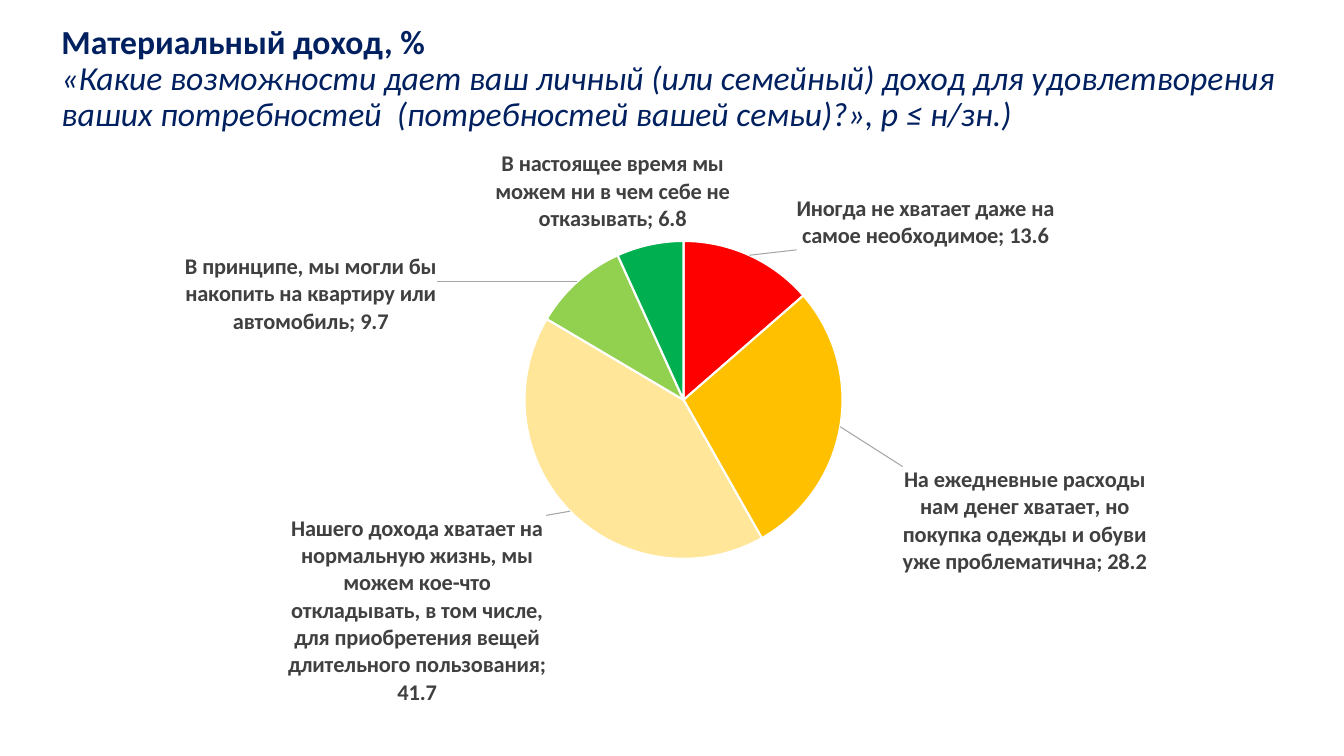
from copy import deepcopy

from lxml import etree
from pptx import Presentation
from pptx import util as u
from pptx.chart.data import CategoryChartData
from pptx.dml.color import RGBColor
from pptx.enum import chart as charts, text
from pptx.oxml import parse_xml
from pptx.oxml.ns import nsdecls, qn

HEADING = "Материальный доход, %"
QUESTION = (
    "«Какие возможности дает ваш личный (или семейный) доход для удовлетворения "
    "ваших потребностей  (потребностей вашей семьи)?», p ≤ н/зн.)"
)
# Answer, share, slice colour, label shift as a fraction of the chart
INCOME = [
    ("Иногда не хватает даже на самое необходимое", 13.6, "FF0000", (0.034, 0)),
    ("На ежедневные расходы нам денег хватает, но покупка одежды и обуви "
     "уже проблематична", 28.2, "FFC000", (0.043, 0.066)),
    ("Нашего дохода хватает на нормальную жизнь, мы можем кое-что откладывать, "
     "в том числе, для приобретения вещей длительного пользования",
     41.7, "FFE699", (-0.015, 0)),
    ("В принципе, мы могли бы накопить на квартиру или автомобиль",
     9.7, "92D050", (-0.104, 0.099)),
    ("В настоящее время мы можем ни в чем себе не отказывать",
     6.8, "00B050", (0.062, -0.01)),
]


def color(value):
    return RGBColor.from_string(value)


def manual_layout(**settings):
    """Return a c:layout element; settings follow schema order."""
    items = "".join(f'<c:{name} val="{value}"/>' for name, value in settings.items())
    return parse_xml(
        f'<c:layout {nsdecls("c")}><c:manualLayout>{items}</c:manualLayout></c:layout>'
    )


class SlideBuilder:
    font_name = "Calibri"
    title_color = "002060"
    label_color = "404040"

    def __init__(self, deck):
        self.page = deck.slides.add_slide(deck.slide_layouts[5])

    def style(self, font, size, hex_color, bold=False, italic=False):
        font.name, font.size = self.font_name, u.Pt(size)
        font.bold, font.italic = bold, italic
        font.color.rgb = color(hex_color)

    def title(self, heading, question, left, top, width, height):
        box = self.page.shapes.title
        box.left, box.top = u.Inches(left), u.Inches(top)
        box.width, box.height = u.Inches(width), u.Inches(height)
        frame = box.text_frame
        frame.auto_size = text.MSO_AUTO_SIZE.NONE
        frame.vertical_anchor = text.MSO_ANCHOR.MIDDLE
        para = frame.paragraphs[0]
        para.text = f"{heading}\v{question}"
        para.alignment = text.PP_ALIGN.LEFT
        para.line_spacing = 0.9
        first, second = para.runs
        self.style(first.font, 24, self.title_color, bold=True)
        self.style(second.font, 24, self.title_color, italic=True)

    def pie(self, rows, left, top, width, height):
        data = CategoryChartData()
        data.categories = [row[0] for row in rows]
        data.add_series("Series 1", [row[1] for row in rows])
        chart = self.page.shapes.add_chart(
            charts.XL_CHART_TYPE.PIE, u.Inches(left), u.Inches(top),
            u.Inches(width), u.Inches(height), data,
        ).chart
        chart.has_title = chart.has_legend = False
        self.style(chart.font, 10, "000000")
        plot = chart.plots[0]
        plot.vary_by_categories = True
        series = plot.series[0]
        for index, (_, _, fill, _) in enumerate(rows):
            slice_format = series.points[index].format
            slice_format.fill.solid()
            slice_format.fill.fore_color.rgb = color(fill)
            slice_format.line.color.rgb = color("FFFFFF")
            slice_format.line.width = u.Pt(1.5)

        area = chart.element.find(".//" + qn("c:plotArea"))
        for old in area.findall(qn("c:layout")):
            area.remove(old)
        area.insert(0, manual_layout(
            layoutTarget="inner", xMode="edge", yMode="edge",
            x=0.369, y=0.168, w=0.242, h=0.54,
        ))
        self.pie_labels(series.data_labels, [row[3] for row in rows])

    def pie_labels(self, labels, shifts):
        """Show answer and value beside each slice, with grey leader lines."""
        labels.show_value = labels.show_category_name = True
        labels.position = charts.XL_LABEL_POSITION.BEST_FIT
        self.style(labels.font, 16, self.label_color, bold=True)
        group = series_labels = labels._element
        for old in group.findall(qn("c:showLeaderLines")):
            group.remove(old)
        etree.SubElement(group, qn("c:separator")).text = "; "
        shared = [deepcopy(child) for child in series_labels]
        for index, (x, y) in enumerate(shifts):
            label = etree.Element(qn("c:dLbl"))
            etree.SubElement(label, qn("c:idx")).set("val", str(index))
            label.append(manual_layout(x=x, y=y))
            label.extend(deepcopy(child) for child in shared)
            group.insert(index, label)
        etree.SubElement(group, qn("c:showLeaderLines")).set("val", "1")
        group.append(parse_xml(
            f'<c:leaderLines {nsdecls("c", "a")}><c:spPr><a:ln w="9525"><a:solidFill>'
            '<a:srgbClr val="A6A6A6"/></a:solidFill></a:ln></c:spPr></c:leaderLines>'
        ))


def main():
    deck = Presentation()
    deck.slide_width, deck.slide_height = u.Inches(13.33), u.Inches(7.5)
    builder = SlideBuilder(deck)
    builder.title(HEADING, QUESTION, 0.51, 0.17, 12.24, 1.24)
    builder.pie(INCOME, 0.39, 1.41, 13.04, 5.84)
    deck.save("out.pptx")


if __name__ == "__main__":
    main()
